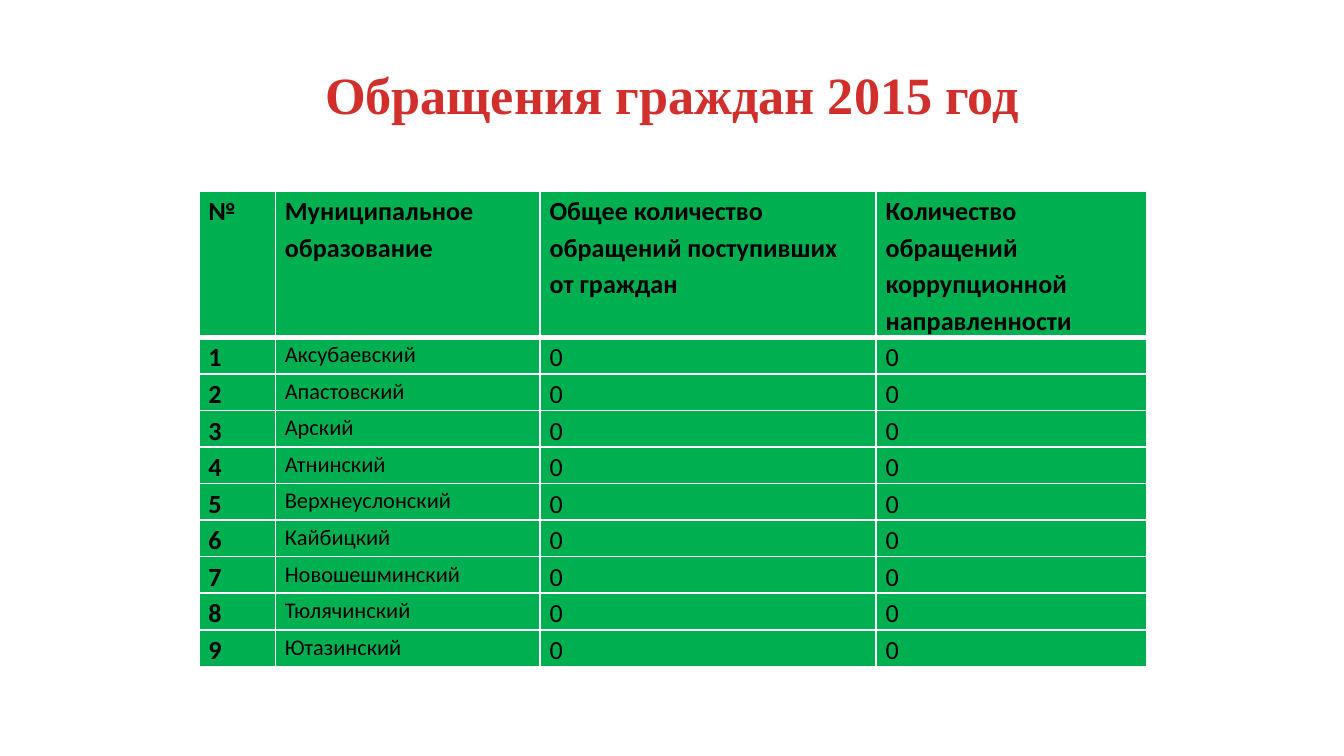
from dataclasses import dataclass

from lxml.etree import SubElement
from pptx import Presentation
from pptx.dml.color import RGBColor
from pptx.enum.text import MSO_ANCHOR, PP_ALIGN
from pptx.oxml.ns import qn
from pptx.util import Inches, Pt

# Content
TITLE = "Обращения граждан 2015 год"
HEADERS = [
    "№",
    "Муниципальное образование",
    "Общее количество обращений поступивших от граждан",
    "Количество обращений коррупционной направленности",
]
DISTRICTS = [
    "Аксубаевский", "Апастовский", "Арский", "Атнинский", "Верхнеуслонский",
    "Кайбицкий", "Новошешминский", "Тюлячинский", "Ютазинский",
]
ROWS = [HEADERS] + [
    [str(number), name, "0", "0"] for number, name in enumerate(DISTRICTS, 1)
]


@dataclass(frozen=True)
class Theme:
    title_font: str = "Times New Roman"
    body_font: str = "Calibri"
    title_color: str = "D02F2C"
    text_color: str = "000000"
    cell_color: str = "00B050"
    border_color: str = "FFFFFF"
    title_size: int = 28
    body_size: int = 14
    name_size: int = 12
    thin_line: int = 1
    thick_line: int = 3


THEME = Theme()

# Layout, in inches, on a 16:9 slide
WIDTH = 10
HEIGHT = WIDTH * 9 / 16
MARGIN = WIDTH * 0.05
TITLE_TOP, TITLE_HEIGHT = 0.23, 0.94
TABLE_LEFT, TABLE_TOP, TABLE_HEIGHT = 1.48, 1.42, 3.54
COLUMN_WIDTHS = [0.57, 1.97, 2.5, 2.01]
HEADER_HEIGHT = 1.09
DISTRICT_HEIGHT = (TABLE_HEIGHT - HEADER_HEIGHT) / len(DISTRICTS)
ROW_HEIGHTS = [HEADER_HEIGHT] + [DISTRICT_HEIGHT] * len(DISTRICTS)
CELL_INSET = 0.07


def write_text(frame, text, *, font, size, color, bold=False,
               align=PP_ALIGN.LEFT, line_spacing=1.0, space_after=0):
    """Put one formatted paragraph into a text frame."""
    frame.word_wrap = True
    para = frame.paragraphs[0]
    para.alignment = align
    para.line_spacing = line_spacing
    para.space_after = Pt(space_after)
    span = para.add_run()
    span.text = text
    span.font.name = font
    span.font.size = Pt(size)
    span.font.bold = bold
    span.font.color.rgb = RGBColor.from_string(color)


def set_borders(cell, top, bottom):
    """Draw the four sides of a cell; widths are in points."""
    widths = {"L": THEME.thin_line, "R": THEME.thin_line, "T": top, "B": bottom}
    properties = cell._tc.get_or_add_tcPr()
    for side, width in widths.items():
        line = SubElement(properties, qn(f"a:ln{side}"), w=str(Pt(width)))
        fill = SubElement(line, qn("a:solidFill"))
        SubElement(fill, qn("a:srgbClr"), val=THEME.border_color)


def add_title(page):
    box = page.shapes.add_textbox(
        Inches(MARGIN), Inches(TITLE_TOP),
        Inches(WIDTH - 2 * MARGIN), Inches(TITLE_HEIGHT))
    box.text_frame.vertical_anchor = MSO_ANCHOR.MIDDLE
    write_text(box.text_frame, TITLE, font=THEME.title_font,
               size=THEME.title_size, color=THEME.title_color,
               bold=True, align=PP_ALIGN.CENTER)


def add_appeals_table(page):
    table = page.shapes.add_table(
        len(ROWS), len(HEADERS), Inches(TABLE_LEFT), Inches(TABLE_TOP),
        Inches(sum(COLUMN_WIDTHS)), Inches(TABLE_HEIGHT)).table
    table.horz_banding = False
    for column, width in zip(table.columns, COLUMN_WIDTHS):
        column.width = Inches(width)
    for row, height in zip(table.rows, ROW_HEIGHTS):
        row.height = Inches(height)

    for row_index, values in enumerate(ROWS):
        is_header = row_index == 0
        for column_index, value in enumerate(values):
            cell = table.cell(row_index, column_index)
            cell.margin_left = cell.margin_right = Inches(CELL_INSET)
            cell.margin_top = cell.margin_bottom = 0
            # The thick rule separates the header from the first district
            set_borders(
                cell,
                top=THEME.thick_line if row_index == 1 else THEME.thin_line,
                bottom=THEME.thick_line if is_header else THEME.thin_line)
            cell.fill.solid()
            cell.fill.fore_color.rgb = RGBColor.from_string(THEME.cell_color)
            is_name = column_index == 1 and not is_header
            write_text(cell.text_frame, value, font=THEME.body_font,
                       size=THEME.name_size if is_name else THEME.body_size,
                       color=THEME.text_color,
                       bold=is_header or column_index == 0,
                       line_spacing=1.15, space_after=10)


def main():
    deck = Presentation()
    deck.slide_width, deck.slide_height = Inches(WIDTH), Inches(HEIGHT)
    page = deck.slides.add_slide(deck.slide_layouts[6])
    add_title(page)
    add_appeals_table(page)
    deck.save("out.pptx")


if __name__ == "__main__":
    main()
